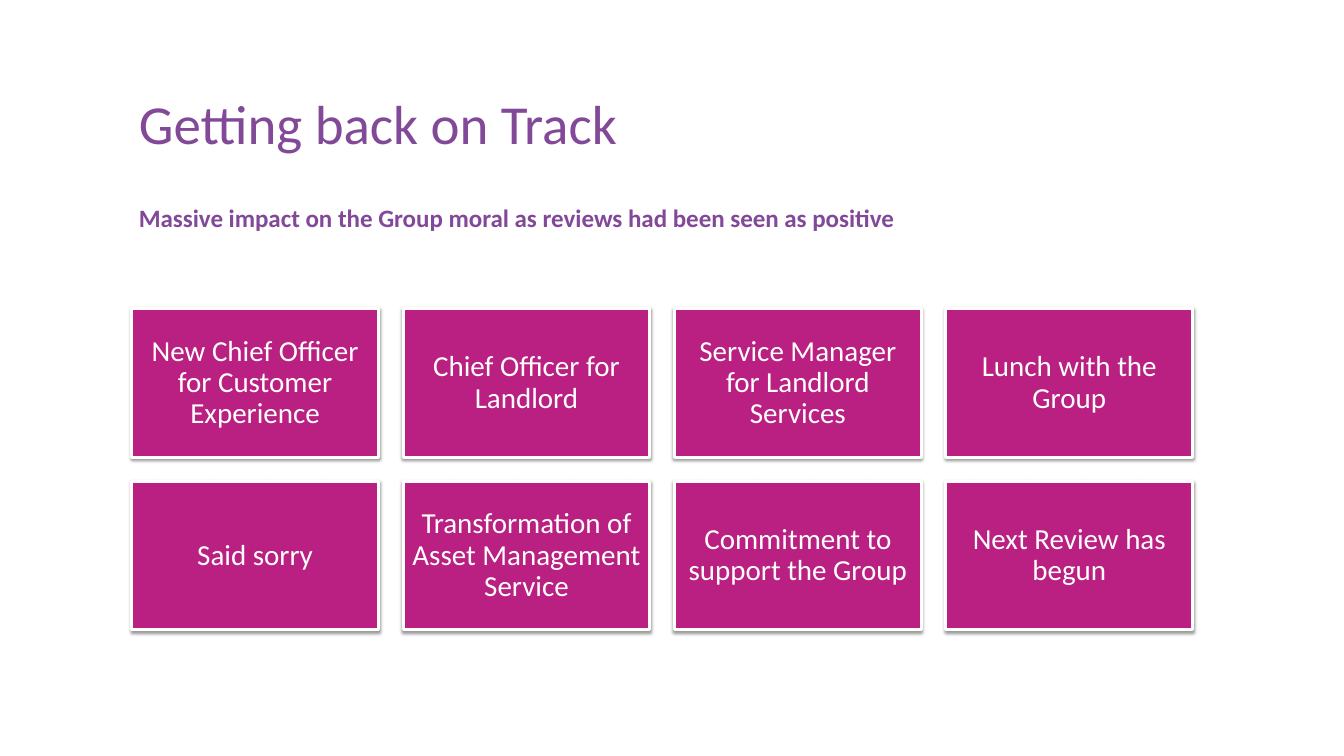
from lxml import etree
from pptx import Presentation
from pptx.dml.color import RGBColor
from pptx.enum.shapes import MSO_SHAPE
from pptx.enum.text import MSO_ANCHOR, MSO_AUTO_SIZE, PP_ALIGN
from pptx.oxml.ns import qn
from pptx.util import Inches, Pt

RECTANGLE = MSO_SHAPE.RECTANGLE
TOP, MIDDLE = MSO_ANCHOR.TOP, MSO_ANCHOR.MIDDLE
LEFT, CENTER = PP_ALIGN.LEFT, PP_ALIGN.CENTER
NO_AUTOFIT = MSO_AUTO_SIZE.NONE

COLORS = {"purple": "824998", "magenta": "B92081", "white": "FFFFFF", "shadow": "000000"}
FONT = "Calibri"


def write_text(shape, text, size, color, bold=False, align=LEFT, anchor=TOP,
               inset=None, line_spacing=None):
    frame = shape.text_frame
    frame.word_wrap = True
    frame.auto_size = NO_AUTOFIT
    frame.vertical_anchor = anchor
    if inset is not None:
        frame.margin_left = frame.margin_right = Inches(inset)
        frame.margin_top = frame.margin_bottom = Inches(inset)
    paragraph = frame.paragraphs[0]
    paragraph.alignment = align
    if line_spacing is not None:
        paragraph.line_spacing = line_spacing
    run = paragraph.add_run()
    run.text = text
    run.font.name = FONT
    run.font.size = Pt(size)
    run.font.bold = bold
    run.font.color.rgb = RGBColor.from_string(COLORS[color])


def add_shadow(shape):
    shape.shadow.inherit = False
    effects = shape._element.spPr.find(qn("a:effectLst"))
    shadow = etree.SubElement(effects, qn("a:outerShdw"), blurRad=str(Pt(3.1)),
                              dist=str(Pt(1.6)), dir="5400000", rotWithShape="0")
    shade = etree.SubElement(shadow, qn("a:srgbClr"), val=COLORS["shadow"])
    etree.SubElement(shade, qn("a:alpha"), val="38000")


presentation = Presentation()
presentation.slide_width = Inches(18.67)
presentation.slide_height = Inches(10.5)
slide = presentation.slides.add_slide(presentation.slide_layouts[5])

# Title
title = slide.shapes.title
title.left, title.top = Inches(1.83), Inches(1.01)
title.width, title.height = Inches(13.57), Inches(1.39)
write_text(title, "Getting back on Track", size=55, color="purple", anchor=MIDDLE)

# Impact statement
impact = slide.shapes.add_textbox(Inches(1.83), Inches(2.77), Inches(14.77), Inches(0.75))
write_text(impact, "Massive impact on the Group moral as reviews had been seen as positive",
           size=25, color="purple", bold=True)

# Grid of actions
ACTIONS = [
    "New Chief Officer for Customer Experience",
    "Chief Officer for Landlord",
    "Service Manager for Landlord Services",
    "Lunch with the Group",
    "Said sorry",
    "Transformation of Asset Management Service",
    "Commitment to support the Group",
    "Next Review has begun",
]
COLUMNS = 4
GRID_LEFT, GRID_TOP = 1.83, 4.29
TILE_WIDTH, TILE_HEIGHT, GAP = 3.43, 2.06, 0.34

for index, action in enumerate(ACTIONS):
    row, column = divmod(index, COLUMNS)
    tile = slide.shapes.add_shape(
        RECTANGLE,
        Inches(GRID_LEFT + column * (TILE_WIDTH + GAP)),
        Inches(GRID_TOP + row * (TILE_HEIGHT + GAP)),
        Inches(TILE_WIDTH), Inches(TILE_HEIGHT))
    tile.fill.solid()
    tile.fill.fore_color.rgb = RGBColor.from_string(COLORS["magenta"])
    tile.line.color.rgb = RGBColor.from_string(COLORS["white"])
    tile.line.width = Pt(3)
    add_shadow(tile)
    write_text(tile, action, size=29, color="white", align=CENTER, anchor=MIDDLE,
               inset=0.12, line_spacing=0.9)

presentation.save("out.pptx")
